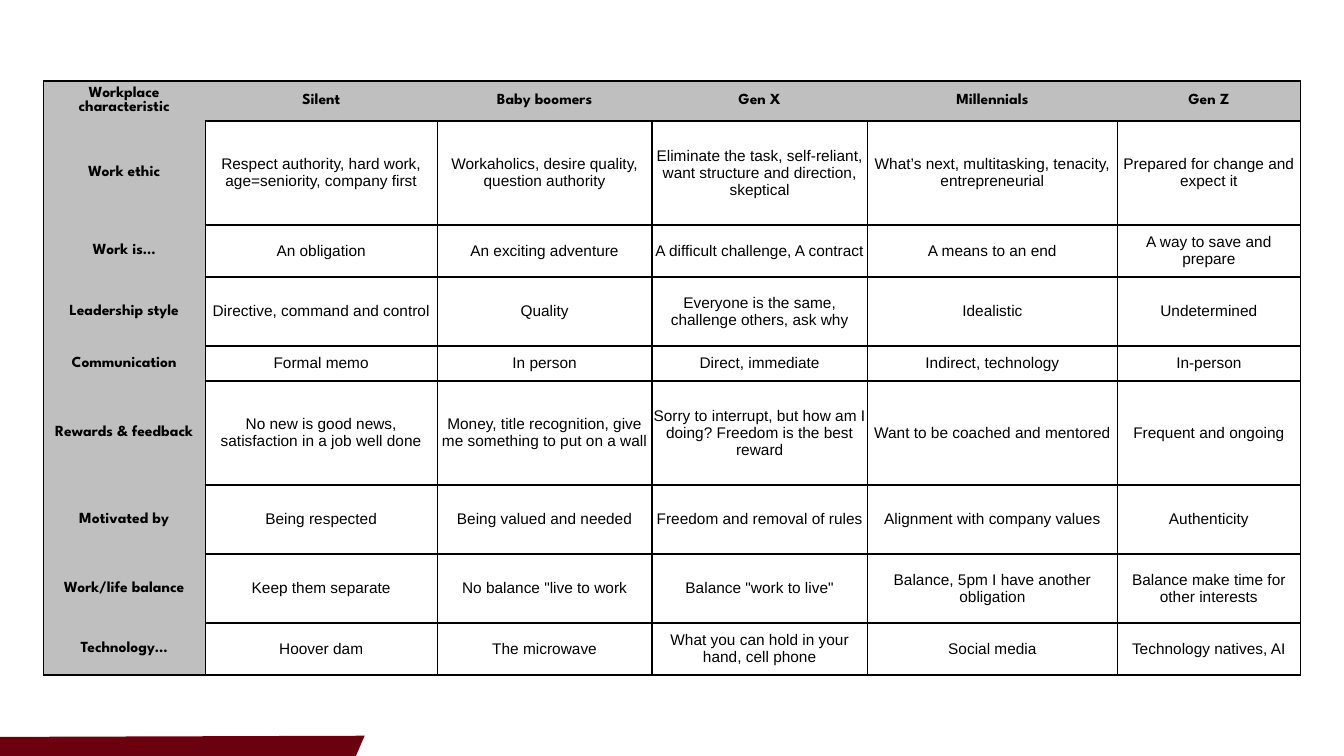
from pptx import Presentation
from pptx.dml.color import RGBColor
from pptx.enum.text import MSO_VERTICAL_ANCHOR as Anchor, PP_PARAGRAPH_ALIGNMENT as Align
from pptx.oxml.ns import qn
from pptx.util import Cm, Pt
from lxml.etree import SubElement

COLOURS = {"label": "BFBFBF", "body": "FFFFFF", "ink": "000000", "accent": "6B010F"}
LABEL_FONT, BODY_FONT = "League Spartan", "Arial"
COLUMN_WIDTHS = [4.08, 5.85, 5.41, 5.43, 6.3, 4.61]
ROW_HEIGHTS = [1.01, 2.62, 1.31, 1.74, 0.88, 2.62, 1.74, 1.74, 1.31]
GENERATIONS = [
    ["Workplace characteristic", "Silent", "Baby boomers", "Gen X", "Millennials", "Gen Z"],
    ["Work ethic", "Respect authority, hard work, age=seniority, company first",
     "Workaholics, desire quality, question authority",
     "Eliminate the task, self-reliant, want structure and direction, skeptical",
     "What’s next, multitasking, tenacity, entrepreneurial",
     "Prepared for change and expect it"],
    ["Work is…", "An obligation", "An exciting adventure", "A difficult challenge, A contract",
     "A means to an end", "A way to save and prepare"],
    ["Leadership style", "Directive, command and control", "Quality",
     "Everyone is the same, challenge others, ask why", "Idealistic", "Undetermined"],
    ["Communication", "Formal memo", "In person", "Direct, immediate",
     "Indirect, technology", "In-person"],
    ["Rewards & feedback", "No new is good news, satisfaction in a job well done",
     "Money, title recognition, give me something to put on a wall",
     "Sorry to interrupt, but how am I doing? Freedom is the best reward",
     "Want to be coached and mentored", "Frequent and ongoing"],
    ["Motivated by", "Being respected", "Being valued and needed",
     "Freedom and removal of rules", "Alignment with company values", "Authenticity"],
    ["Work/life balance", "Keep them separate", 'No balance "live to work',
     'Balance "work to live"', "Balance, 5pm I have another obligation",
     "Balance make time for other interests"],
    ["Technology…", "Hoover dam", "The microwave",
     "What you can hold in your hand, cell phone", "Social media", "Technology natives, AI"],
]


def add_footer_band(page):
    """Draw the slanted band at the bottom left."""
    builder = page.shapes.build_freeform(Cm(0), Cm(18.57))
    builder.add_line_segments([(Cm(9.19), Cm(18.54)), (Cm(8.97), Cm(19.05)), (Cm(0), Cm(19.05))])
    band = builder.convert_to_shape()
    band.shadow.inherit = False
    band.fill.solid()
    band.fill.fore_color.rgb = RGBColor.from_string(COLOURS["accent"])
    band.line.fill.background()


def set_borders(cell, edges):
    """Draw each edge of a cell as a thin line or leave it empty."""
    properties = cell._tc.get_or_add_tcPr()
    for side, visible in edges.items():
        line = SubElement(properties, qn(f"a:ln{side}"), w=str(Pt(1)))
        if visible:
            fill = SubElement(line, qn("a:solidFill"))
            SubElement(fill, qn("a:srgbClr"), val=COLOURS["ink"])
        else:
            SubElement(line, qn("a:noFill"))


def fill_cell(cell, text, is_label):
    """Write and format one cell as a label or as body text."""
    cell.fill.solid()
    cell.fill.fore_color.rgb = RGBColor.from_string(COLOURS["label" if is_label else "body"])
    cell.margin_left = cell.margin_right = cell.margin_top = cell.margin_bottom = 0
    cell.vertical_anchor = Anchor.MIDDLE
    para = cell.text_frame.paragraphs[0]
    para.text = text
    para.alignment = Align.CENTER
    font = para.runs[0].font
    font.name = LABEL_FONT if is_label else BODY_FONT
    font.size = Pt(11)
    font.bold = is_label
    font.color.rgb = RGBColor.from_string(COLOURS["ink"])


def add_generation_table(page):
    """Add the table that compares the generations."""
    frame = page.shapes.add_table(len(ROW_HEIGHTS), len(COLUMN_WIDTHS), Cm(1.09), Cm(2.04),
                                  Cm(sum(COLUMN_WIDTHS)), Cm(sum(ROW_HEIGHTS)))
    table = frame.table
    table.horz_banding = False
    for column, width in zip(table.columns, COLUMN_WIDTHS):
        column.width = Cm(width)
    for row, height in zip(table.rows, ROW_HEIGHTS):
        row.height = Cm(height)
    last_row, last_column = len(ROW_HEIGHTS) - 1, len(COLUMN_WIDTHS) - 1
    for r, texts in enumerate(GENERATIONS):
        for c, text in enumerate(texts):
            cell = table.cell(r, c)
            set_borders(cell, {"L": r > 0 or c == 0, "R": r > 0 or c == last_column,
                               "T": c > 0 or r == 0, "B": c > 0 or r == last_row})
            fill_cell(cell, text, r == 0 or c == 0)


def main():
    """Build the deck and save it."""
    deck = Presentation()
    deck.slide_width, deck.slide_height = Cm(33.87), Cm(19.05)
    page = deck.slides.add_slide(deck.slide_layouts[6])
    add_footer_band(page)
    add_generation_table(page)
    deck.save("out.pptx")


if __name__ == "__main__":
    main()
